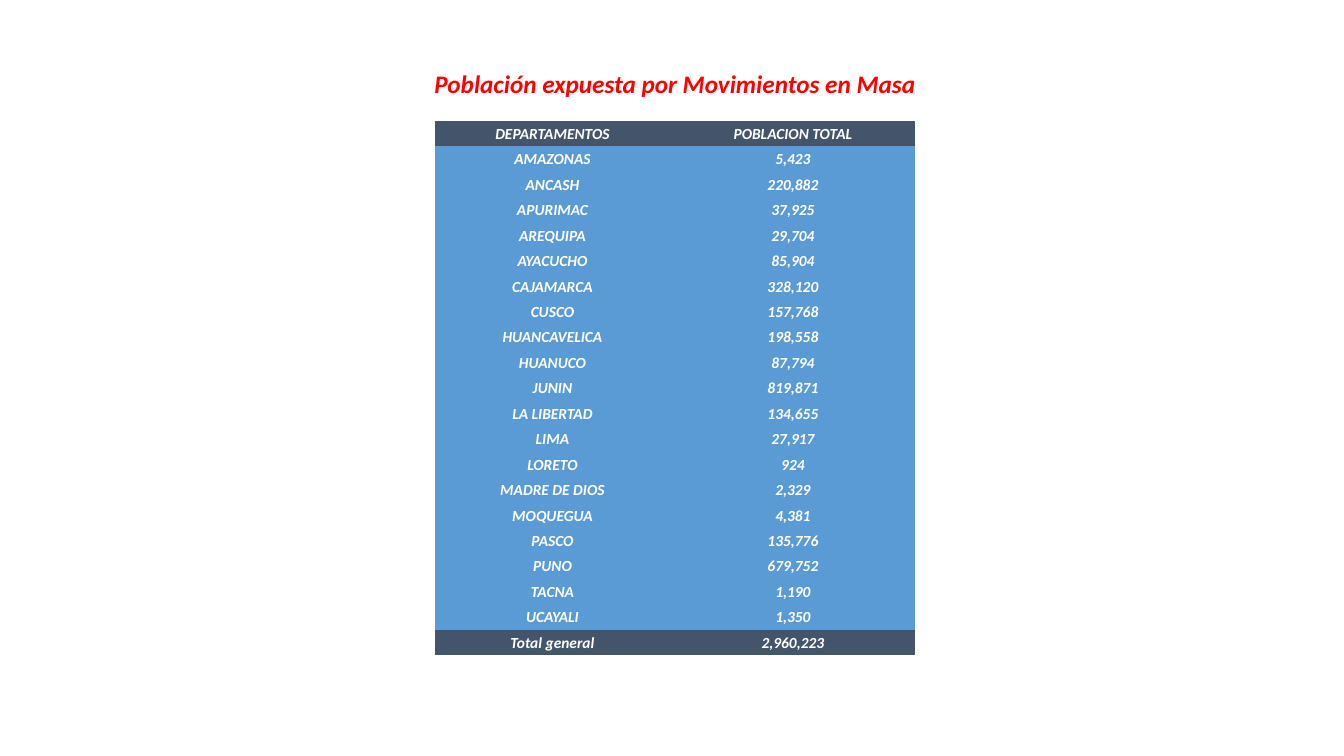
from dataclasses import dataclass

from pptx import Presentation
from pptx.dml.color import RGBColor
from pptx.enum.text import MSO_ANCHOR, MSO_AUTO_SIZE, PP_ALIGN
from pptx.oxml.ns import qn
from pptx.slide import Slide
from pptx.table import _Cell
from pptx.text.text import TextFrame
from pptx.util import Inches, Pt

CENTER = PP_ALIGN.CENTER
MIDDLE = MSO_ANCHOR.MIDDLE
GROW = MSO_AUTO_SIZE.SHAPE_TO_FIT_TEXT

FONT = "Calibri"
RED = "FF0000"
WHITE = "FFFFFF"
SLATE = "44546A"
BLUE = "5B9BD5"
PLAIN_TABLE_STYLE = "{2D5ABB26-0587-4C30-8999-92F81FD0307C}"
COLUMN_WIDTHS = (2.34, 2.43)


@dataclass(frozen=True)
class Department:
    name: str
    population: int


@dataclass(frozen=True)
class Row:
    label: str
    value: str
    fill: str


DEPARTMENTS = [
    Department("AMAZONAS", 5423),
    Department("ANCASH", 220882),
    Department("APURIMAC", 37925),
    Department("AREQUIPA", 29704),
    Department("AYACUCHO", 85904),
    Department("CAJAMARCA", 328120),
    Department("CUSCO", 157768),
    Department("HUANCAVELICA", 198558),
    Department("HUANUCO", 87794),
    Department("JUNIN", 819871),
    Department("LA LIBERTAD", 134655),
    Department("LIMA", 27917),
    Department("LORETO", 924),
    Department("MADRE DE DIOS", 2329),
    Department("MOQUEGUA", 4381),
    Department("PASCO", 135776),
    Department("PUNO", 679752),
    Department("TACNA", 1190),
    Department("UCAYALI", 1350),
]


def color(hex_code: str) -> RGBColor:
    return RGBColor.from_string(hex_code)


def write(frame: TextFrame, text: str, size: float, hex_code: str) -> None:
    frame.text = text
    paragraph = frame.paragraphs[0]
    paragraph.alignment = CENTER
    font = paragraph.runs[0].font
    font.name = FONT
    font.size = Pt(size)
    font.bold = True
    font.italic = True
    font.color.rgb = color(hex_code)


def add_heading(slide: Slide, text: str) -> None:
    heading = slide.shapes.add_textbox(
        Inches(4.18), Inches(0.63), Inches(5.03), Inches(0.4)
    )
    write(heading.text_frame, text, 18, RED)
    heading.text_frame.word_wrap = False
    heading.text_frame.auto_size = GROW


def fill_cell(cell: _Cell, text: str, fill: str) -> None:
    cell.fill.solid()
    cell.fill.fore_color.rgb = color(fill)
    cell.vertical_anchor = MIDDLE
    cell.margin_left = cell.margin_right = cell.margin_top = Inches(0.01)
    cell.margin_bottom = Inches(0)
    write(cell.text_frame, text, 11, WHITE)


def add_population_table(slide: Slide, rows: list[Row]) -> None:
    table = slide.shapes.add_table(
        len(rows), len(COLUMN_WIDTHS),
        Inches(4.31), Inches(1.2), Inches(sum(COLUMN_WIDTHS)), Inches(5.3),
    ).table
    table.first_row = False
    table.horz_banding = False
    table._tbl.tblPr.find(qn("a:tableStyleId")).text = PLAIN_TABLE_STYLE
    for column, width in zip(table.columns, COLUMN_WIDTHS):
        column.width = Inches(width)
    for index, row in enumerate(rows):
        fill_cell(table.cell(index, 0), row.label, row.fill)
        fill_cell(table.cell(index, 1), row.value, row.fill)


def main() -> None:
    presentation = Presentation()
    presentation.slide_width = Inches(13.33)
    presentation.slide_height = Inches(7.5)
    slide = presentation.slides.add_slide(presentation.slide_layouts[6])

    total = sum(department.population for department in DEPARTMENTS)
    rows = [
        Row("DEPARTAMENTOS", "POBLACION TOTAL", SLATE),
        *(Row(d.name, f"{d.population:,}", BLUE) for d in DEPARTMENTS),
        Row("Total general", f"{total:,}", SLATE),
    ]
    add_heading(slide, "Población expuesta por Movimientos en Masa")
    add_population_table(slide, rows)
    presentation.save("out.pptx")


if __name__ == "__main__":
    main()
